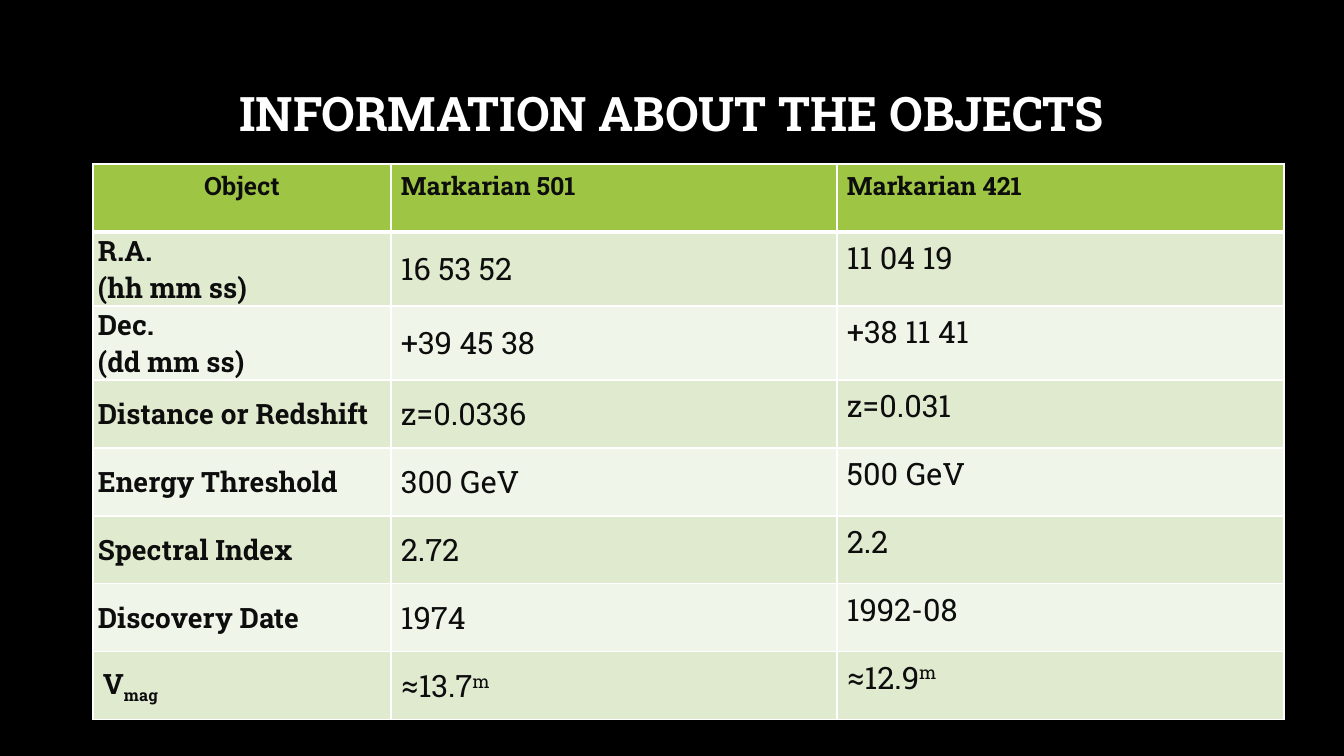
from lxml.etree import SubElement
from pptx import Presentation
from pptx.dml.color import RGBColor
from pptx.enum.text import MSO_ANCHOR, PP_ALIGN
from pptx.oxml.ns import qn
from pptx.util import Pt

# Content: "|" splits off a raised or lowered mark
TITLE = "INFORMATION ABOUT THE OBJECTS"
ROWS = [
    ("Object", "Markarian 501", "Markarian 421"),
    ("R.A.\n(hh mm ss)", "16 53 52", "11 04 19"),
    ("Dec.\n(dd mm ss)", "+39 45 38", "+38 11 41"),
    ("Distance or Redshift", "z=0.0336", "z=0.031"),
    ("Energy Threshold", "300 GeV", "500 GeV"),
    ("Spectral Index", "2.72", "2.2"),
    ("Discovery Date", "1974", "1992-08"),
    ("V|mag", "≈13.7|m", "≈12.9|m"),
]
FONT = "Roboto Slab"
WHITE, INK, GREEN = "FFFFFF", "0D0D0D", "9EC544"
BANDS = ["F0F5E9", "DFEACF"]

# Lengths in px
SCALE = 914400 / 100.8
SLIDE = (1344, 756)
HEAD = (101, 68, 1141, 97)
LEFT, TOP = 93, 164
WIDTHS = [298, 446, 447]
ROW, TALL = 68, 74
PAD = (10, 5, 10, 5)
TIGHT = (5, 0, 5, 0)


def px(n):
    return round(n * SCALE)


def color(code):
    return RGBColor.from_string(code)


def style(para, size, bold, code):
    font = para.font
    font.name, font.size, font.bold = FONT, Pt(size), bold
    font.color.rgb = color(code)


def write(frame, text, size, bold, code, shift=0):
    for i, line in enumerate(text.split("\n")):
        para = frame.add_paragraph() if i else frame.paragraphs[0]
        style(para, size, bold, code)
        for j, part in enumerate(line.split("|")):
            run = para.add_run()
            run.text = part
            if j:
                run._r.get_or_add_rPr().set("baseline", str(shift))


def border(cell, low):
    props = cell._tc.get_or_add_tcPr()
    for side, width in (("L", 1), ("R", 1), ("T", 1), ("B", low)):
        line = SubElement(props, qn("a:ln" + side), w=str(Pt(width)))
        fill = SubElement(line, qn("a:solidFill"))
        SubElement(fill, qn("a:srgbClr"), val=WHITE)


deck = Presentation()
deck.slide_width, deck.slide_height = map(px, SLIDE)
slide = deck.slides.add_slide(deck.slide_layouts[6])
slide.background.fill.solid()
slide.background.fill.fore_color.rgb = color("000000")

# Title
frame = slide.shapes.add_textbox(*map(px, HEAD)).text_frame
frame.word_wrap = True
frame.vertical_anchor = MSO_ANCHOR.MIDDLE
write(frame, TITLE, 34, True, WHITE)
frame.paragraphs[0].alignment = PP_ALIGN.CENTER
frame.paragraphs[0].line_spacing = 0.9

# Table
highs = [TALL if "\n" in row[0] else ROW for row in ROWS]
area = (LEFT, TOP, sum(WIDTHS), sum(highs))
table = slide.shapes.add_table(len(ROWS), len(WIDTHS), *map(px, area)).table
for col, width in zip(table.columns, WIDTHS):
    col.width = px(width)

for r, row in enumerate(ROWS):
    table.rows[r].height = px(highs[r])
    for c, text in enumerate(row):
        cell = table.cell(r, c)
        top, label = r == 0, c == 0
        size = 18 if top else 20 if label else 22
        write(cell.text_frame, text, size, top or label, INK,
              -25000 if label else 30000)

        # Place the text in its cell
        plain = top or not label or "|" in text
        pad = map(px, PAD if plain else TIGHT)
        (cell.margin_left, cell.margin_top,
         cell.margin_right, cell.margin_bottom) = pad
        high = top or c == 2
        cell.vertical_anchor = MSO_ANCHOR.TOP if high else MSO_ANCHOR.MIDDLE
        if top and label:
            cell.text_frame.paragraphs[0].alignment = PP_ALIGN.CENTER

        # Lines go before the fill
        border(cell, 3 if top else 1)
        cell.fill.solid()
        cell.fill.fore_color.rgb = color(GREEN if top else BANDS[r % 2])

deck.save("out.pptx")
